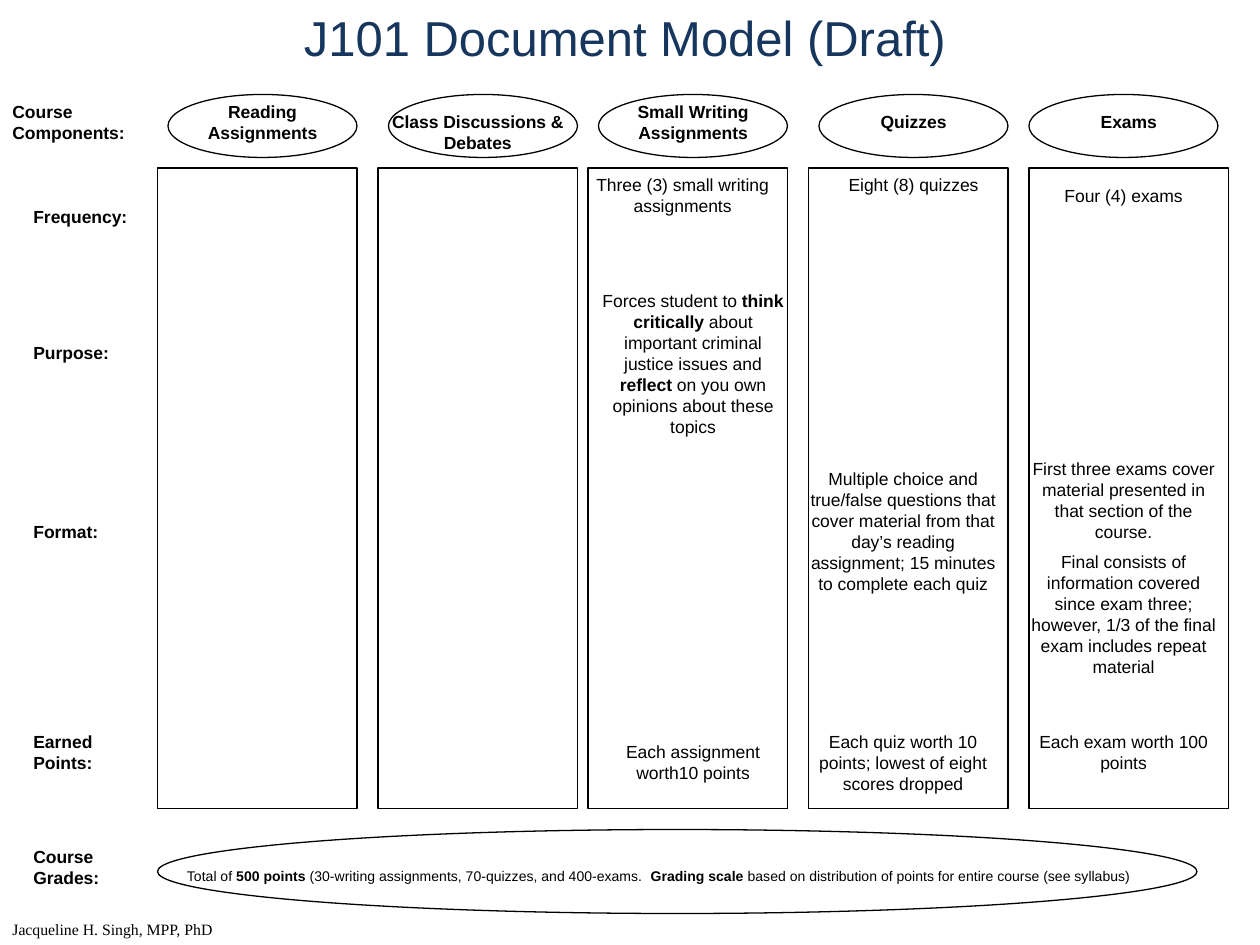
"""Build the course document model slide on a 120 by 90 grid."""
from pptx import Presentation
from pptx.dml.color import RGBColor
from pptx.enum.shapes import MSO_SHAPE as Shape
from pptx.enum.text import MSO_ANCHOR as Anchor, PP_ALIGN as Align
from pptx.util import Inches, Pt

BLACK = RGBColor(0x00, 0x00, 0x00)
NAVY = RGBColor(0x17, 0x36, 0x5D)

deck = Presentation()
deck.slide_width, deck.slide_height = Inches(10), Inches(7.5)
unit = deck.slide_width / 120
slide = deck.slides.add_slide(deck.slide_layouts[6])


def write(spot, words, align=Align.CENTER, color=BLACK, wrap=True, **form):
    """Add a text box; asterisks enclose bold words."""
    look = {"name": "Arial", "size": Pt(10), "bold": False} | form
    frame = slide.shapes.add_textbox(*[int(n * unit) for n in spot]).text_frame
    frame.word_wrap = wrap
    for row, line in enumerate(words.split("\n")):
        para = frame.paragraphs[0] if row == 0 else frame.add_paragraph()
        para.alignment = align
        para.space_before = Pt(5 if row else 0)
        for turn, part in enumerate(line.split("*")):
            run = para.add_run()
            run.text = part
            for key, value in look.items():
                setattr(run.font, key, value)
            run.font.bold = look["bold"] or turn % 2 == 1
            run.font.color.rgb = color
    return frame


def draw(kind, *spot):
    """Add an outlined shape without a fill."""
    shape = slide.shapes.add_shape(kind, *[int(n * unit) for n in spot])
    shape.shadow.inherit = False
    shape.fill.background()
    shape.line.color.rgb = BLACK
    shape.line.width = Pt(0.75)


title = write((22, 0, 75, 7), "J101 Document Model (Draft)", color=NAVY, size=Pt(28))
title.vertical_anchor = Anchor.MIDDLE

for oval, box in zip((16, 37, 57, 78, 98), (15, 36, 56, 77, 98)):
    draw(Shape.OVAL, oval, 9, 18, 6)
    draw(Shape.RECTANGLE, box, 16, 19, 61)
draw(Shape.OVAL, 15, 79, 99, 8)

heads = [
    (16, 9, 18, "Reading Assignments"),
    (35, 10, 21, "Class Discussions & Debates"),
    (58, 9, 16, "Small Writing Assignments"),
    (79, 10, 16, "Quizzes"),
    (100, 10, 15, "Exams"),
]
for left, top, width, words in heads:
    write((left, top, width, 5), words, bold=True)

labels = [
    (0, 9, 14, "Course Components:"),
    (2, 19, 12, "Frequency:"),
    (2, 32, 10, "Purpose:"),
    (2, 49, 10, "Format:"),
    (2, 69, 9, "Earned Points:"),
    (2, 80, 12, "Course Grades:"),
]
for left, top, width, words in labels:
    write((left, top, width, 5), words, Align.LEFT, bold=True)

notes = [
    (55, 16, 20, 5, "Three (3) small writing assignments"),
    (77, 16, 20, 6, "Eight (8) quizzes"),
    (99, 17, 16, 3, "Four (4) exams"),
    (56, 27, 20, 18, "Forces student to *think critically* about important criminal "
     "justice issues and *reflect* on you own opinions about these topics"),
    (76, 44, 20, 16, "Multiple choice and true/false questions that cover material "
     "from that day’s reading assignment; 15 minutes to complete each quiz"),
    (97, 43, 20, 25, "First three exams cover material presented in that section of "
     "the course.\nFinal consists of information covered since exam three; however, "
     "1/3 of the final exam includes repeat material"),
    (56, 70, 20, 5, "Each assignment worth10 points"),
    (76, 69, 20, 10, "Each quiz worth 10 points; lowest of eight scores dropped"),
    (97, 69, 20, 8, "Each exam worth 100 points"),
]
for *spot, words in notes:
    write(spot, words)

write((16.5, 82, 92.5, 2.8), "Total of *500 points* (30-writing assignments, 70-quizzes, "
      "and 400-exams.  *Grading scale* based on distribution of points for entire "
      "course (see syllabus)", wrap=False, size=Pt(8))
write((0, 87, 22.2, 3), "Jacqueline H. Singh, MPP, PhD", Align.LEFT, wrap=False,
      name="Times New Roman", size=Pt(9))

deck.save("out.pptx")
